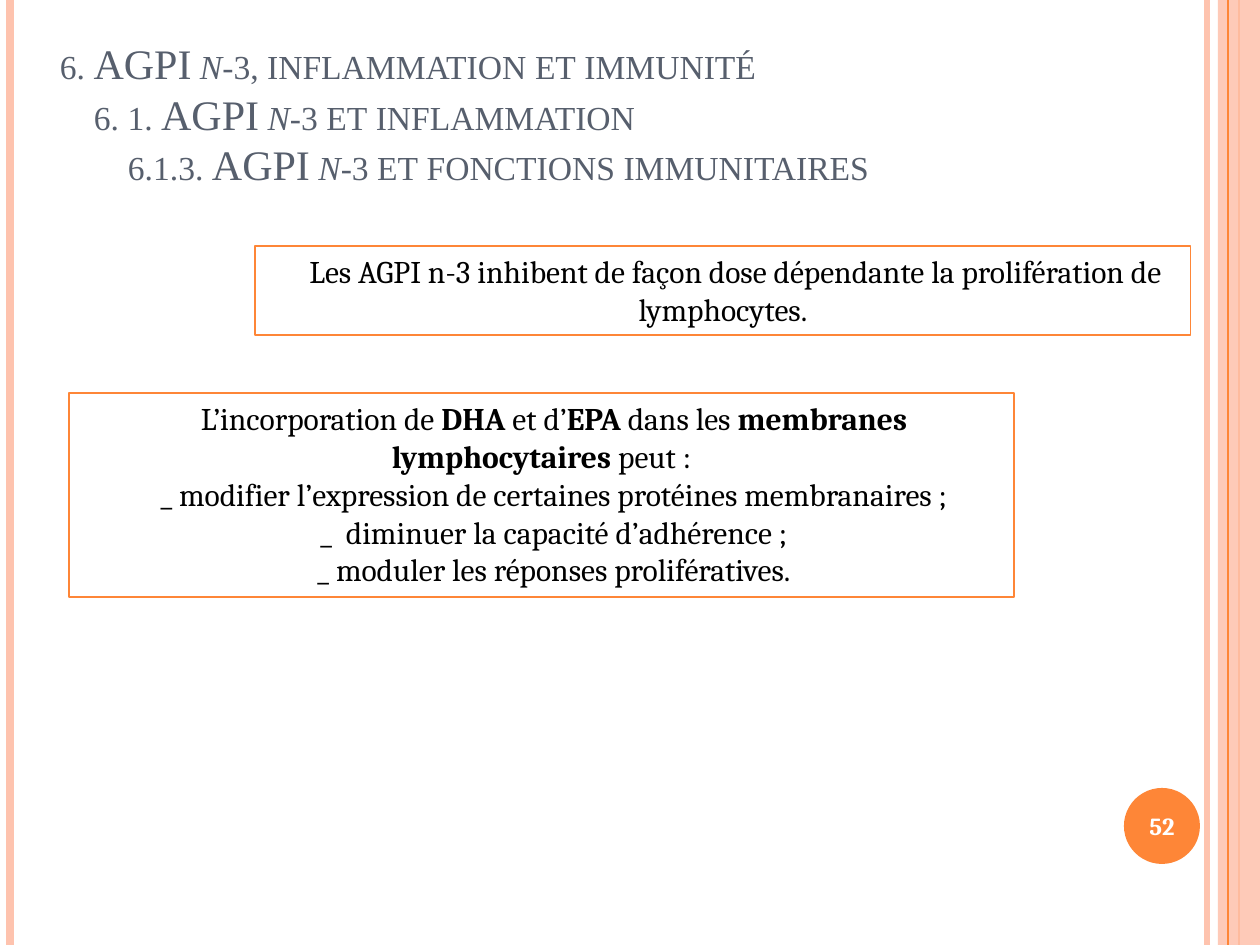
from dataclasses import dataclass
from lxml import etree
from pptx import Presentation
from pptx.dml.color import RGBColor
from pptx.enum.shapes import MSO_CONNECTOR, MSO_SHAPE
from pptx.enum.text import MSO_ANCHOR, PP_ALIGN
from pptx.oxml.ns import qn
from pptx.util import Pt

LINE, RECT, OVAL = MSO_CONNECTOR.STRAIGHT, MSO_SHAPE.RECTANGLE, MSO_SHAPE.OVAL
TOP, MIDDLE, BOTTOM = MSO_ANCHOR.TOP, MSO_ANCHOR.MIDDLE, MSO_ANCHOR.BOTTOM
LEFT, CENTER = PP_ALIGN.LEFT, PP_ALIGN.CENTER


@dataclass(frozen=True)
class Theme:
    peach: str = "FEC3AE"
    orange: str = "FE8637"
    slate: str = "575F6D"
    black: str = "000000"
    white: str = "FFFFFF"
    serif: str = "Times New Roman"
    body: str = "Cambria"
    title_pt: int = 24
    body_pt: int = 18
    num_pt: int = 14


THEME = Theme()
PX = 914400 // 126
WIDE, HIGH = 1260, 945

# Text is a list of paragraphs; each paragraph is a list of (words, style).
TITLE = [
    [("6. AGPI ", ""), ("n", "i"), ("-3, inflammation et immunité", "")],
    [("6. 1. AGPI ", ""), ("n", "i"), ("-3 et inflammation", "")],
    [("6.1.3. AGPI ", ""), ("n", "i"), ("-3 et fonctions immunitaires", "")],
]
BOXES = [
    ((255, 246, 936, 89), [
        [("Les AGPI n-3 inhibent de façon dose dépendante la prolifération de lymphocytes.", "")],
    ]),
    ((69, 393, 945, 204), [
        [("L’incorporation de ", ""), ("DHA", "b"), (" et d’", ""), ("EPA", "b"),
         (" dans les ", ""), ("membranes lymphocytaires ", "b"), ("peut :", "")],
        [("_ modifier l’expression de certaines protéines membranaires ;", "")],
        [("_  diminuer la capacité d’adhérence ;", "")],
        [("_ moduler les réponses prolifératives.", "")],
    ]),
]
NUMBER = [[("52", "b")]]
BACK_RULES = [(1207, THEME.peach, 3), (10, THEME.peach, 4.5), (1239, THEME.orange, 1.5)]
FRONT_RULES = [(1228, THEME.orange, 0.75)]
BAND, BAND_ALPHA = (1218, 0, 42, HIGH), 87
DISC = (1124, 788, 76, 76)
NUMBER_AT = (1120, 790, 84, 72)
TITLE_AT = (39, 20, 1182, 217)
TITLE_LEFT, TITLE_FOOT, TITLE_STEP, TITLE_PITCH = 21, 48, 34, 28.8
FIRST_INDENT = 25


def rgb(code):
    return RGBColor.from_string(code)


def px(*nums):
    return [n * PX for n in nums]


def rules(slide, items):
    for x, color, width in items:
        rule = slide.shapes.add_connector(LINE, *px(x, 0, x, HIGH))
        rule.line.color.rgb = rgb(color)
        rule.line.width = Pt(width)
        etree.SubElement(rule._element.spPr, qn("a:effectLst"))


def shape(slide, kind, at, fill=None, line=None):
    item = slide.shapes.add_shape(kind, *px(*at))
    item.shadow.inherit = False
    if fill:
        item.fill.solid()
        item.fill.fore_color.rgb = rgb(fill)
    else:
        item.fill.background()
    if line:
        item.line.color.rgb = rgb(line)
        item.line.width = Pt(0.75)
    else:
        item.line.fill.background()
    return item


def write(item, paras, font, size, color, align, anchor):
    frame = item.text_frame
    frame.word_wrap = True
    frame.vertical_anchor = anchor
    for i, parts in enumerate(paras):
        para = frame.add_paragraph() if i else frame.paragraphs[0]
        para.alignment = align
        for words, style in parts:
            run = para.add_run()
            run.text = words
            run.font.name = font
            run.font.size = Pt(size)
            run.font.color.rgb = rgb(color)
            run.font.bold = style == "b"
            run.font.italic = style == "i"
    return frame


def add_title(slide):
    item = slide.shapes.add_textbox(*px(*TITLE_AT))
    frame = write(item, TITLE, THEME.serif, THEME.title_pt, THEME.slate, LEFT, BOTTOM)
    frame.margin_left, frame.margin_bottom = px(TITLE_LEFT, TITLE_FOOT)
    for level, para in enumerate(frame.paragraphs):
        para.line_spacing = Pt(TITLE_PITCH)
        para._p.get_or_add_pPr().set("marL", str(level * TITLE_STEP * PX))
        for run in para.runs:
            run.font._element.set("cap", "small")


def add_box(slide, at, paras):
    item = shape(slide, RECT, at, line=THEME.orange)
    frame = write(item, paras, THEME.body, THEME.body_pt, THEME.black, CENTER, TOP)
    for para in frame.paragraphs:
        para._p.get_or_add_pPr().set("indent", str(FIRST_INDENT * PX))


def main():
    deck = Presentation()
    deck.slide_width, deck.slide_height = px(WIDE, HIGH)
    slide = deck.slides.add_slide(deck.slide_layouts[6])

    rules(slide, BACK_RULES)
    band = shape(slide, RECT, BAND, fill=THEME.peach)
    tint = band._element.spPr.find(qn("a:solidFill"))[0]
    etree.SubElement(tint, qn("a:alpha"), val=str(BAND_ALPHA * 1000))
    rules(slide, FRONT_RULES)

    shape(slide, OVAL, DISC, fill=THEME.orange)
    number = slide.shapes.add_textbox(*px(*NUMBER_AT))
    write(number, NUMBER, THEME.body, THEME.num_pt, THEME.white, CENTER, MIDDLE)

    add_title(slide)
    for at, paras in BOXES:
        add_box(slide, at, paras)
    deck.save("out.pptx")


if __name__ == "__main__":
    main()
